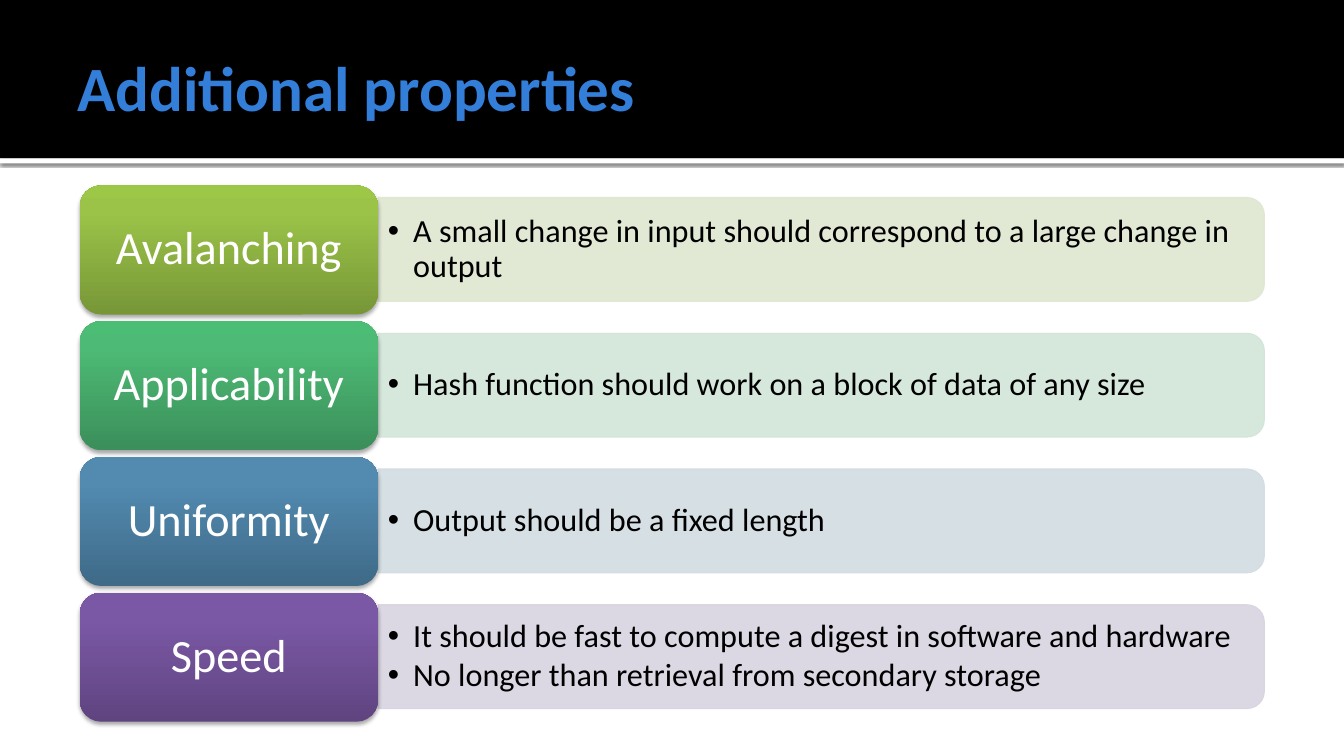
import pptx
import pptx.util
import pptx.dml.color
import pptx.enum.shapes
import pptx.enum.text
import pptx.oxml
import pptx.oxml.ns

Inches = pptx.util.Inches
Pt = pptx.util.Pt
RGBColor = pptx.dml.color.RGBColor
Shape = pptx.enum.shapes.MSO_SHAPE
Align = pptx.enum.text.PP_ALIGN
Anchor = pptx.enum.text.MSO_ANCHOR
qn = pptx.oxml.ns.qn

BLACK = RGBColor(0x00, 0x00, 0x00)
WHITE = RGBColor(0xFF, 0xFF, 0xFF)
BLUE = RGBColor(0x33, 0x7E, 0xD9)
GREENS = [RGBColor(0x77, 0x97, 0x37), RGBColor(0x9B, 0xC3, 0x48), RGBColor(0x9D, 0xC7, 0x46)]
MINTS = [RGBColor(0x3B, 0x8F, 0x5A), RGBColor(0x4D, 0xBA, 0x75), RGBColor(0x4B, 0xBD, 0x75)]
STEELS = [RGBColor(0x3F, 0x6A, 0x88), RGBColor(0x52, 0x8A, 0xB0), RGBColor(0x51, 0x8B, 0xB3)]
PLUMS = [RGBColor(0x5F, 0x44, 0x80), RGBColor(0x7B, 0x58, 0xA6), RGBColor(0x7C, 0x57, 0xA8)]
PALE_GREEN = RGBColor(0xDE, 0xE7, 0xD1)
PALE_MINT = RGBColor(0xD2, 0xE5, 0xD9)
PALE_STEEL = RGBColor(0xD2, 0xDC, 0xE2)
PALE_PLUM = RGBColor(0xD8, 0xD3, 0xE0)

ROWS = [
    ("Avalanching", GREENS, PALE_GREEN,
     ["A small change in input should correspond to a large change in output"]),
    ("Applicability", MINTS, PALE_MINT,
     ["Hash function should work on a block of data of any size"]),
    ("Uniformity", STEELS, PALE_STEEL,
     ["Output should be a fixed length"]),
    ("Speed", PLUMS, PALE_PLUM,
     ["It should be fast to compute a digest in software and hardware",
      "No longer than retrieval from secondary storage"]),
]
TOP = 1.84
STEP = (5.88 - TOP) / (len(ROWS) - 1)


def make(xml):
    return pptx.oxml.parse_xml(xml.replace(">", f" {pptx.oxml.ns.nsdecls('a')}>", 1))


def write(frame, lines, size, color, font="Calibri", bold=False, align=Align.LEFT,
          space=1.0, after=0, bullet=False):
    for row, line in enumerate(lines):
        para = frame.add_paragraph() if row else frame.paragraphs[0]
        para.alignment = align
        para.line_spacing = space
        para.space_after = Pt(after)
        if bullet:
            props = para._p.get_or_add_pPr()
            props.set("marL", str(Inches(0.25)))
            props.set("indent", str(Inches(-0.25)))
            props.append(make('<a:buFont typeface="Arial"></a:buFont>'))
            props.append(make('<a:buChar char="•"></a:buChar>'))
        run = para.add_run()
        run.text = line
        run.font.name = font
        run.font.size = Pt(size)
        run.font.bold = bold
        run.font.color.rgb = color


class Board:
    font = "Calibri"

    def __init__(self, deck):
        self.slide = deck.slides.add_slide(deck.slide_layouts[6])

    def block(self, kind, box, color=None):
        shape = self.slide.shapes.add_shape(kind, *map(Inches, box))
        if color is not None:
            shape.fill.solid()
            shape.fill.fore_color.rgb = color
        shape.line.fill.background()
        shape.shadow.inherit = False
        return shape

    def shade(self, shape, alpha, blur, drop):
        shape._element.spPr.find(qn("a:effectLst")).append(make(
            f'<a:outerShdw blurRad="{Pt(blur)}" dist="{Pt(drop)}" dir="5400000" rotWithShape="0">'
            f'<a:srgbClr val="{BLACK}"><a:alpha val="{alpha * 1000}"/></a:srgbClr></a:outerShdw>'))

    def panel(self, box, color):
        shape = self.block(Shape.ROUND_2_SAME_RECTANGLE, box, color)
        shape.rotation = 90
        shape.line.color.rgb = color
        shape.line.width = Pt(0.75)
        for tint in shape._element.spPr.iter(qn("a:srgbClr")):
            tint.append(make('<a:alpha val="90000"></a:alpha>'))

    def tile(self, box, colors):
        shape = self.block(Shape.ROUNDED_RECTANGLE, box)
        shape.fill.gradient()
        shape.fill.gradient_angle = 90
        stops = shape._element.spPr.find(qn("a:gradFill")).find(qn("a:gsLst"))
        stops[:] = [make(f'<a:gs pos="{spot * 1000}"><a:srgbClr val="{color}"/></a:gs>')
                    for spot, color in zip((0, 80, 100), colors)]
        self.shade(shape, 35, 3.1, 1.8)

    def text(self, box, lines, pads=(0.1, 0.05, 0.1, 0.05), **style):
        frame = self.slide.shapes.add_textbox(*map(Inches, box)).text_frame
        frame.word_wrap = True
        frame.vertical_anchor = Anchor.MIDDLE
        (frame.margin_left, frame.margin_top,
         frame.margin_right, frame.margin_bottom) = map(Inches, pads)
        write(frame, lines, font=self.font, **style)


def main():
    deck = pptx.Presentation()
    deck.slide_width = Inches(13.33)
    deck.slide_height = Inches(7.5)
    board = Board(deck)

    strip = board.block(Shape.RECTANGLE, (0, 1.57, 13.33, 0.05), WHITE)
    board.shade(strip, 60, 2.5, 0.8)
    board.block(Shape.RECTANGLE, (0, 0, 13.33, 1.57), BLACK)
    board.text((0.67, 0.17, 12, 1.37), ["Additional properties"],
               pads=(0.1, 0.05, 0.05, 0.05), size=45, color=BLUE, bold=True)

    for row, (name, colors, pale, points) in enumerate(ROWS):
        top = TOP + row * STEP
        board.panel((7.63, top - 3.76, 1.03, 8.79), pale)
        board.text((3.75, top + 0.17, 8.74, 0.93), points, size=23, color=BLACK,
                   space=0.9, after=3.45, bullet=True)
        board.tile((0.79, top, 2.96, 1.28), colors)
        board.text((0.85, top + 0.06, 2.84, 1.16), [name], pads=(0.14, 0.07, 0.14, 0.07),
                   size=33, color=WHITE, align=Align.CENTER, space=0.9)

    deck.save("out.pptx")


if __name__ == "__main__":
    main()
